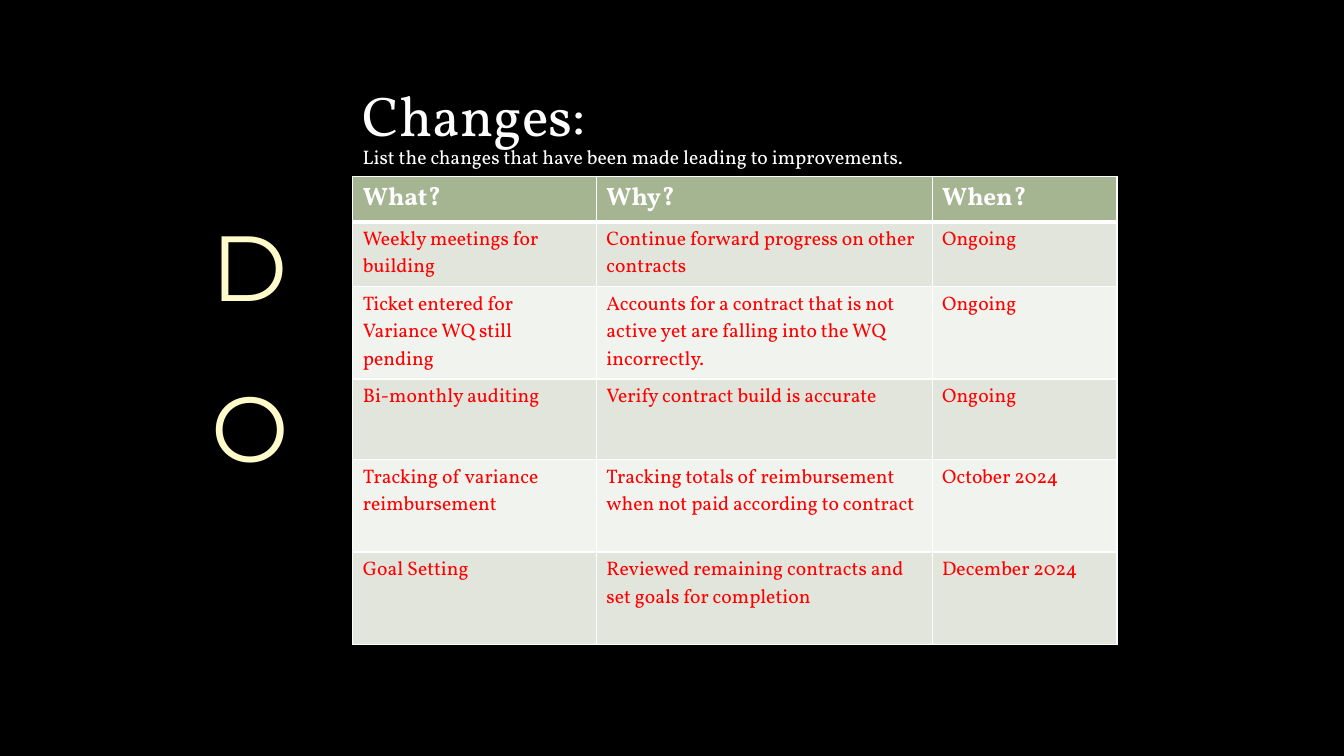
"""Build the "Changes" slide: the DO letters, a heading and a table of improvements."""
from dataclasses import dataclass

from lxml.etree import SubElement
from pptx import Presentation
from pptx.dml.color import RGBColor
from pptx.enum.text import MSO_ANCHOR as Anchor, PP_ALIGN as Align
from pptx.oxml.ns import qn
from pptx.util import Cm, Pt


@dataclass(frozen=True)
class Theme:
    """Colours, fonts and type sizes of the slide."""
    background: str = "000000"
    white: str = "FFFFFF"
    letter: str = "FEFAC9"
    entry: str = "FF0000"
    header_fill: str = "A5B592"
    band_fills: tuple[str, str] = ("E1E5DC", "F0F3EE")
    serif: str = "Vollkorn"
    sans: str = "Montserrat"
    letter_size: int = 66
    title_size: int = 40
    header_size: int = 18
    body_size: int = 14
    border: int = 1
    header_rule: int = 3


@dataclass(frozen=True)
class Box:
    """Position and size in centimetres."""
    left: float
    top: float
    width: float
    height: float

    def lengths(self) -> tuple[Cm, Cm, Cm, Cm]:
        """Return the four lengths in slide units."""
        return Cm(self.left), Cm(self.top), Cm(self.width), Cm(self.height)


@dataclass(frozen=True)
class Change:
    """One improvement, with the height of its table row in centimetres."""
    what: str
    why: str
    when: str
    height: float


THEME = Theme()
LETTERS_BOX = Box(5.08, 4.45, 2.74, 10.36)
HEADING_BOX = Box(8.89, 1.9, 19.05, 2.57)
TABLE_BOX = Box(8.89, 4.45, 19.26, 11.46)
COLUMN_WIDTHS = (6.14, 8.46, 4.66)
HEADER = Change("What?", "Why?", "When?", 1.11)
CHANGES = (
    Change("Weekly meetings for building",
           "Continue forward progress on other contracts", "Ongoing", 1.63),
    Change("Ticket entered for Variance WQ still pending",
           "Accounts for a contract that is not active yet are falling into the WQ incorrectly.",
           "Ongoing", 2.03),
    Change("Bi-monthly auditing", "Verify contract build is accurate", "Ongoing", 2.03),
    Change("Tracking of variance reimbursement",
           "Tracking totals of reimbursement when not paid according to contract",
           "October 2024", 2.33),
    Change("Goal Setting", "Reviewed remaining contracts and set goals for completion",
           "December 2024", 2.33),
)


def write(frame, text: str, *, size: int, color: str, font: str = THEME.serif,
          bold: bool = False, line_spacing: float = 1.0,
          before: float = 0, after: float = 0) -> None:
    """Write one formatted paragraph, filling the empty first one if there is one."""
    paragraph = frame.add_paragraph() if frame.text else frame.paragraphs[0]
    paragraph.text = text
    paragraph.alignment = Align.LEFT
    paragraph.line_spacing = line_spacing
    paragraph.space_before, paragraph.space_after = Pt(before), Pt(after)
    paragraph.font.name, paragraph.font.size = font, Pt(size)
    paragraph.font.bold = bold
    paragraph.font.color.rgb = RGBColor.from_string(color)


def add_text_frame(slide, box: Box):
    """Add a wrapping text box and return its text frame."""
    frame = slide.shapes.add_textbox(*box.lengths()).text_frame
    frame.word_wrap = True
    frame.vertical_anchor = Anchor.TOP
    return frame


def set_borders(cell, top: int, bottom: int) -> None:
    """Give a cell white borders, with its own top and bottom widths in points."""
    properties = cell._tc.get_or_add_tcPr()
    widths = {"a:lnL": THEME.border, "a:lnR": THEME.border, "a:lnT": top, "a:lnB": bottom}
    for tag, width in widths.items():
        line = SubElement(properties, qn(tag), w=str(Pt(width)))
        fill = SubElement(line, qn("a:solidFill"))
        SubElement(fill, qn("a:srgbClr"), val=THEME.white)


def add_changes_table(slide) -> None:
    """Add the table of changes with its header row and banded entries."""
    rows = (HEADER, *CHANGES)
    table = slide.shapes.add_table(len(rows), len(COLUMN_WIDTHS), *TABLE_BOX.lengths()).table
    for column, width in zip(table.columns, COLUMN_WIDTHS):
        column.width = Cm(width)
    for index, (row, change) in enumerate(zip(table.rows, rows)):
        row.height = Cm(change.height)
        is_header = index == 0
        fill = THEME.header_fill if is_header else THEME.band_fills[(index - 1) % 2]
        for cell, text in zip(row.cells, (change.what, change.why, change.when)):
            set_borders(cell, top=THEME.header_rule if index == 1 else THEME.border,
                        bottom=THEME.header_rule if is_header else THEME.border)
            cell.fill.solid()
            cell.fill.fore_color.rgb = RGBColor.from_string(fill)
            write(cell.text_frame, text, bold=is_header,
                  size=THEME.header_size if is_header else THEME.body_size,
                  color=THEME.white if is_header else THEME.entry)


def main() -> None:
    """Build and save the presentation."""
    presentation = Presentation()
    presentation.slide_width, presentation.slide_height = Cm(33.87), Cm(19.05)
    slide = presentation.slides.add_slide(presentation.slide_layouts[6])
    slide.background.fill.solid()
    slide.background.fill.fore_color.rgb = RGBColor.from_string(THEME.background)

    add_changes_table(slide)

    letters = add_text_frame(slide, LETTERS_BOX)
    for index, letter in enumerate("DO"):
        write(letters, letter, size=THEME.letter_size, color=THEME.letter, font=THEME.sans,
              line_spacing=1.25, before=6 if index else 0, after=10)

    heading = add_text_frame(slide, HEADING_BOX)
    write(heading, "Changes:", size=THEME.title_size, color=THEME.white)
    write(heading, "List the changes that have been made leading to improvements.",
          size=THEME.body_size, color=THEME.white, line_spacing=0.9)

    presentation.save("out.pptx")


if __name__ == "__main__":
    main()
